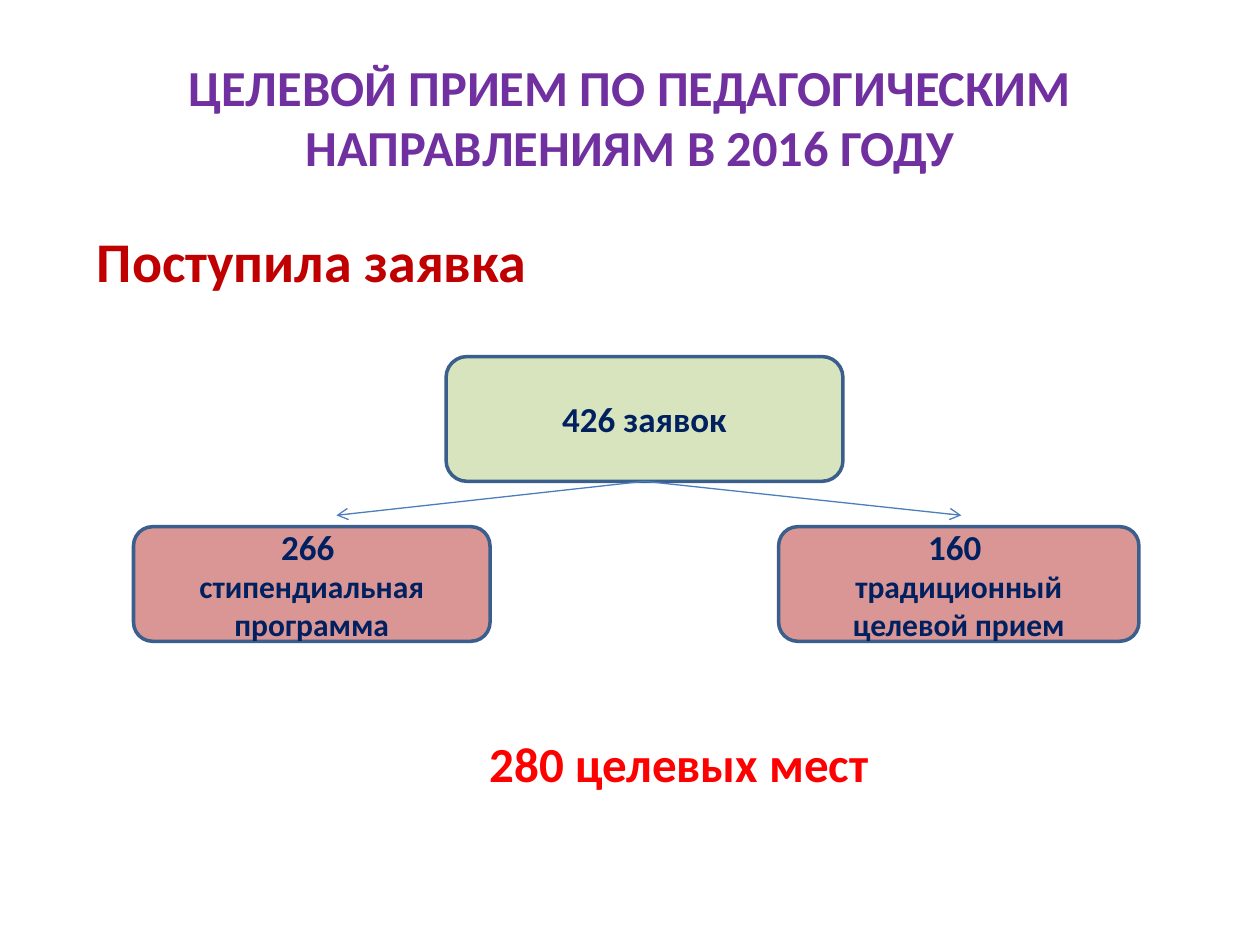
from dataclasses import dataclass

from pptx import Presentation
from pptx import util as u
from pptx.dml.color import RGBColor
from pptx.enum import shapes, text
from pptx.oxml.ns import qn
from lxml import etree


@dataclass(frozen=True)
class Theme:
    font: str = "Calibri"
    title: str = "7030A0"
    heading: str = "C00000"
    total: str = "FF0000"
    ink: str = "002060"
    green: str = "D7E4BD"
    rose: str = "D99694"
    border: str = "3A5F8C"
    arrow: str = "4B7EBC"
    title_size: float = 28.8
    heading_size: float = 32
    total_size: float = 28
    number_size: float = 20
    label_size: float = 18


T = Theme()
W, H = 10, 7.5
CENTER, LEFT = text.PP_ALIGN.CENTER, text.PP_ALIGN.LEFT
MIDDLE, TOP = text.MSO_ANCHOR.MIDDLE, text.MSO_ANCHOR.TOP

TITLE = "ЦЕЛЕВОЙ ПРИЕМ ПО ПЕДАГОГИЧЕСКИМ НАПРАВЛЕНИЯМ В 2016 ГОДУ"
CAPTIONS = [
    ("Поступила заявка", (0.67, 1.75, 8.83, 0.7), T.heading_size, T.heading, LEFT),
    ("280 целевых мест", (2.87, 5.77, 5.04, 0.57), T.total_size, T.total, CENTER),
]
ROOT = (["426 заявок"], (3.54, 2.83, 3.15, 0.99), T.green)
BRANCHES = [
    (["266 ", "стипендиальная программа"], (1.06, 4.18, 2.83, 0.91), T.rose),
    (["160 ", "традиционный целевой прием"], (6.18, 4.18, 2.86, 0.91), T.rose),
]
ARROW_TIPS = [2.67, 7.63]
ARROW_GAP = 0.09


def inches(values):
    return [u.Inches(v) for v in values]


def write(sp, lines, color, align, anchor):
    tf = sp.text_frame
    for name, value in dict(word_wrap=True, vertical_anchor=anchor,
                            auto_size=text.MSO_AUTO_SIZE.NONE).items():
        setattr(tf, name, value)
    for i, (line, size) in enumerate(lines):
        p = tf.paragraphs[0] if i == 0 else tf.add_paragraph()
        p.alignment = align
        r = p.add_run()
        r.text = line
        for name, value in dict(name=T.font, size=u.Pt(size), bold=True).items():
            setattr(r.font, name, value)
        r.font.color.rgb = RGBColor.from_string(color)


def add_box(s, lines, place, fill):
    sp = s.shapes.add_shape(shapes.MSO_SHAPE.ROUNDED_RECTANGLE, *inches(place))
    sp.shadow.inherit = False
    sp.fill.solid()
    sp.fill.fore_color.rgb = RGBColor.from_string(fill)
    sp.line.color.rgb = RGBColor.from_string(T.border)
    sp.line.width = u.Pt(2)
    sizes = [T.number_size, T.label_size]
    write(sp, list(zip(lines, sizes)), T.ink, CENTER, MIDDLE)


def add_arrow(s, start, end):
    sp = s.shapes.add_connector(shapes.MSO_CONNECTOR.STRAIGHT, *inches(start + end))
    sp.line.color.rgb = RGBColor.from_string(T.arrow)
    sp.line.width = u.Pt(0.75)
    etree.SubElement(sp.line._get_or_add_ln(), qn("a:tailEnd"), type="arrow")
    etree.SubElement(sp._element.spPr, qn("a:effectLst"))


def main():
    prs = Presentation()
    prs.slide_width, prs.slide_height = inches((W, H))
    s = prs.slides.add_slide(prs.slide_layouts[5])

    title = s.shapes.title
    place = (0.05 * W, 0.04 * H, 0.9 * W, H / 6)
    for name, value in zip(("left", "top", "width", "height"), inches(place)):
        setattr(title, name, value)
    write(title, [(TITLE, T.title_size)], T.title, CENTER, MIDDLE)

    for caption, place, size, color, align in CAPTIONS:
        sp = s.shapes.add_textbox(*inches(place))
        write(sp, [(caption, size)], color, align, TOP)

    add_box(s, *ROOT)
    left, top, width, height = ROOT[1]
    start = (left + width / 2, top + height)
    for branch, tip in zip(BRANCHES, ARROW_TIPS):
        add_arrow(s, start, (tip, branch[1][1] - ARROW_GAP))
        add_box(s, *branch)

    prs.save("out.pptx")


if __name__ == "__main__":
    main()
